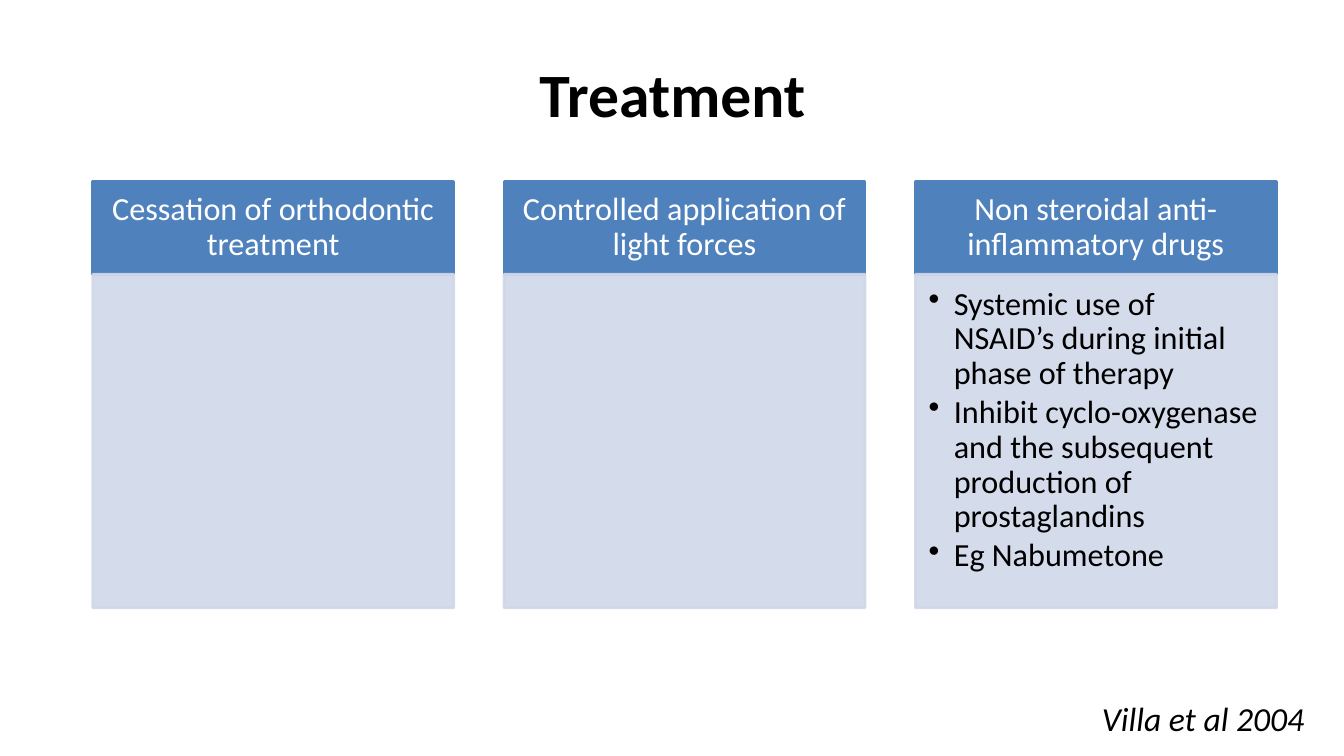
import pptx
import pptx.dml.color
import pptx.enum.shapes
import pptx.enum.text
import pptx.oxml.ns
import pptx.util
from lxml import etree

PX = 9144  # EMU per px, 100 px to the inch
FONT = "Calibri"
COLORS = {"text": "000000", "header": "4F81BD", "header_text": "FFFFFF", "body": "D0D8E8"}
ALIGN = pptx.enum.text.PP_ALIGN
ANCHOR = pptx.enum.text.MSO_ANCHOR

TREATMENTS = [
    ("Cessation of orthodontic treatment", []),
    ("Controlled application of light forces", []),
    ("Non steroidal anti-inflammatory drugs", [
        "Systemic use of NSAID’s during initial phase of therapy",
        "Inhibit cyclo-oxygenase and the subsequent production of prostaglandins",
        "Eg Nabumetone",
    ]),
]


def px(*lengths):
    return [pptx.util.Emu(length * PX) for length in lengths]


def rgb(name):
    return pptx.dml.color.RGBColor.from_string(COLORS[name])


def set_frame(frame, insets, anchor, wrap=True):
    frame.word_wrap = wrap
    frame.vertical_anchor = anchor
    (frame.margin_left, frame.margin_top,
     frame.margin_right, frame.margin_bottom) = px(*insets)


def format_paragraph(paragraph, size, color="text", align=ALIGN.LEFT,
                     bold=False, italic=False, spacing=0.9):
    paragraph.alignment = align
    paragraph.line_spacing = spacing
    for run in paragraph.runs:
        run.font.name = FONT
        run.font.size = pptx.util.Pt(size)
        run.font.bold = bold
        run.font.italic = italic
        run.font.color.rgb = rgb(color)


def add_bullet(paragraph, indent):
    properties = paragraph._p.get_or_add_pPr()
    properties.set("marL", str(indent * PX))
    properties.set("indent", str(-indent * PX))
    bullet = etree.SubElement(properties, pptx.oxml.ns.qn("a:buChar"))
    bullet.set("char", "•")


def add_panel(slide, box, color, opacity=100):
    panel = slide.shapes.add_shape(pptx.enum.shapes.MSO_SHAPE.RECTANGLE, *px(*box))
    panel.shadow.inherit = False
    panel.fill.solid()
    panel.fill.fore_color.rgb = rgb(color)
    panel.line.color.rgb = rgb(color)
    panel.line.width = pptx.util.Pt(2)
    if opacity < 100:
        for tint in panel._element.spPr.iter(pptx.oxml.ns.qn("a:srgbClr")):
            alpha = etree.SubElement(tint, pptx.oxml.ns.qn("a:alpha"))
            alpha.set("val", str(opacity * 1000))
    return panel


def add_title(slide, box, wording):
    title = slide.shapes.title
    title.left, title.top, title.width, title.height = px(*box)
    title.text_frame.text = wording
    set_frame(title.text_frame, (10, 5, 10, 5), ANCHOR.MIDDLE)
    format_paragraph(title.text_frame.paragraphs[0], 44, align=ALIGN.CENTER,
                     bold=True, spacing=1.0)


def add_treatment(slide, box, heading, points):
    left, top, width, height = box
    header_height = 92

    # Heading band
    header = add_panel(slide, (left, top, width, header_height), "header")
    header.text_frame.text = heading
    set_frame(header.text_frame, (18, 10, 18, 10), ANCHOR.MIDDLE)
    format_paragraph(header.text_frame.paragraphs[0], 23, "header_text", ALIGN.CENTER)

    # Body with its bullet points
    body = add_panel(slide, (left, top + header_height, width, height - header_height),
                     "body", opacity=90)
    if not points:
        return
    frame = body.text_frame
    frame.text = "\n".join(points)
    set_frame(frame, (13, 13, 18, 20), ANCHOR.TOP)
    for paragraph in frame.paragraphs:
        add_bullet(paragraph, 25)
        format_paragraph(paragraph, 23)
        paragraph.space_after = pptx.util.Pt(3)


def add_treatments(slide, box, treatments):
    left, top, width, height = box
    gap = 50
    column_width = (width - gap * (len(treatments) - 1)) // len(treatments)
    for index, (heading, points) in enumerate(treatments):
        column_left = left + index * (column_width + gap)
        add_treatment(slide, (column_left, top, column_width, height), heading, points)


def add_citation(slide, box, wording):
    citation = slide.shapes.add_textbox(*px(*box))
    citation.text_frame.text = wording
    set_frame(citation.text_frame, (10, 5, 10, 5), ANCHOR.TOP, wrap=False)
    citation.text_frame.auto_size = pptx.enum.text.MSO_AUTO_SIZE.SHAPE_TO_FIT_TEXT
    format_paragraph(citation.text_frame.paragraphs[0], 24, italic=True)


def main():
    deck = pptx.Presentation()
    deck.slide_width, deck.slide_height = px(1333, 750)
    slide = deck.slides.add_slide(deck.slide_layouts[5])
    add_title(slide, (67, 30, 1200, 125), "Treatment")
    add_treatments(slide, (92, 180, 1174, 423), TREATMENTS)
    add_citation(slide, (1083, 692, 221, 46), "Villa et al 2004")
    deck.save("out.pptx")


if __name__ == "__main__":
    main()
